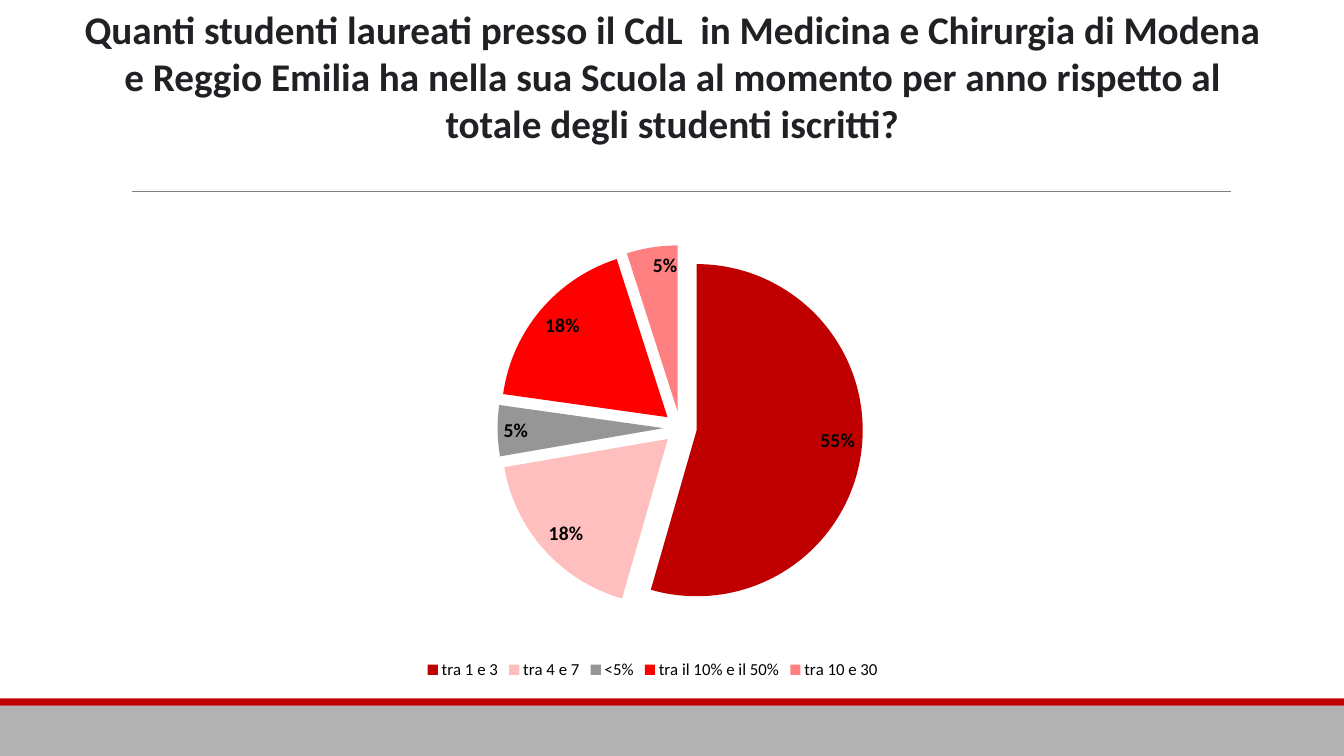
from dataclasses import dataclass

from lxml import etree
from pptx import Presentation
from pptx.chart.data import CategoryChartData
from pptx.dml.color import RGBColor
from pptx.enum.chart import XL_CHART_TYPE as ChartType
from pptx.enum.chart import XL_LABEL_POSITION as LabelPosition
from pptx.enum.chart import XL_LEGEND_POSITION as LegendPosition
from pptx.enum.shapes import MSO_CONNECTOR as Connector
from pptx.enum.shapes import MSO_SHAPE as Preset
from pptx.enum.text import MSO_ANCHOR as Anchor
from pptx.enum.text import MSO_AUTO_SIZE as AutoSize
from pptx.enum.text import PP_ALIGN as Align
from pptx.oxml import parse_xml
from pptx.oxml.ns import nsdecls, qn
from pptx.util import Cm, Pt


@dataclass(frozen=True)
class Theme:
    font: str = "Calibri"
    chart_font: str = "Arial"
    title_ink: str = "202124"
    ink: str = "000000"
    rule: str = "808080"
    band: str = "B2B2B2"
    accent: str = "C00000"
    title_size: int = 28
    label_size: int = 14
    legend_size: int = 12
    chart_size: int = 10


THEME = Theme()
SLIDE_WIDTH, SLIDE_HEIGHT = 33.87, 19.05
QUESTION = (
    "Quanti studenti laureati presso il CdL  in Medicina e Chirurgia di Modena "
    "e Reggio Emilia ha nella sua Scuola al momento per anno rispetto al "
    "totale degli studenti iscritti?"
)
ANSWERS = [
    ("tra 1 e 3", 55, "C00000"),
    ("tra 4 e 7", 18, "FFBFBF"),
    ("<5%", 5, "969696"),
    ("tra il 10% e il 50%", 18, "FF0000"),
    ("tra 10 e 30", 5, "FF8080"),
]
PLOT_LAYOUT = {"x": 0.08, "y": 0.04, "w": 0.9, "h": 0.8}
EXPLOSION = 10


def style_font(font, face, size, color, bold=False):
    font.name = face
    font.size = Pt(size)
    font.bold = bold
    font.color.rgb = RGBColor.from_string(color)


def add_band(slide, left, top, width, height, color):
    band = slide.shapes.add_shape(Preset.RECTANGLE, Cm(left), Cm(top), Cm(width), Cm(height))
    band.shadow.inherit = False
    band.fill.solid()
    band.fill.fore_color.rgb = RGBColor.from_string(color)
    band.line.fill.background()


def add_footer(slide, left, top, width, height):
    stripe = 0.18
    add_band(slide, left, top + stripe, width, height - stripe, THEME.band)
    add_band(slide, left, top, width, stripe, THEME.accent)


def add_rule(slide, left, top, width):
    rule = slide.shapes.add_connector(
        Connector.STRAIGHT, Cm(left), Cm(top), Cm(left + width), Cm(top)
    )
    rule.line.color.rgb = RGBColor.from_string(THEME.rule)
    rule.line.width = Pt(0.5)
    etree.SubElement(rule._element.spPr, qn("a:effectLst"))


def place_question(slide, left, top, width, height):
    question = slide.shapes.title
    question.left, question.top = Cm(left), Cm(top)
    question.width, question.height = Cm(width), Cm(height)
    frame = question.text_frame
    frame.text = QUESTION
    frame.word_wrap = True
    frame.auto_size = AutoSize.SHAPE_TO_FIT_TEXT
    frame.vertical_anchor = Anchor.TOP
    paragraph = frame.paragraphs[0]
    paragraph.alignment = Align.CENTER
    for run in paragraph.runs:
        style_font(run.font, THEME.font, THEME.title_size, THEME.title_ink, bold=True)


def set_plot_layout(chart):
    plot_area = chart._chartSpace.chart.plotArea
    for automatic in plot_area.findall(qn("c:layout")):
        plot_area.remove(automatic)
    sides = "".join(f'<c:{side} val="{share}"/>' for side, share in PLOT_LAYOUT.items())
    plot_area.insert(0, parse_xml(
        f'<c:layout {nsdecls("c")}><c:manualLayout><c:layoutTarget val="inner"/>'
        f'<c:xMode val="edge"/><c:yMode val="edge"/>{sides}</c:manualLayout></c:layout>'
    ))


def style_slices(series):
    for index, (_, _, color) in enumerate(ANSWERS):
        fill = series.points[index].format.fill
        fill.solid()
        fill.fore_color.rgb = RGBColor.from_string(color)
    explosion = parse_xml(f'<c:explosion {nsdecls("c")} val="{EXPLOSION}"/>')
    series._element.find(qn("c:dPt")).addprevious(explosion)


def add_answers_pie(slide, left, top, width, height):
    answers = CategoryChartData()
    answers.categories = [answer for answer, _, _ in ANSWERS]
    answers.add_series("Series 1", [share for _, share, _ in ANSWERS])
    chart = slide.shapes.add_chart(
        ChartType.PIE, Cm(left), Cm(top), Cm(width), Cm(height), answers
    ).chart
    style_font(chart.font, THEME.chart_font, THEME.chart_size, THEME.ink)
    chart.has_title = False
    chart.has_legend = True
    chart.legend.position = LegendPosition.BOTTOM
    chart.legend.include_in_layout = False
    style_font(chart.legend.font, THEME.font, THEME.legend_size, THEME.ink)
    set_plot_layout(chart)

    pie = chart.plots[0]
    pie.vary_by_categories = True
    style_slices(pie.series[0])
    labels = pie.series[0].data_labels
    labels.show_value = True
    labels.number_format = '0"%"'
    labels.number_format_is_linked = False
    labels.position = LabelPosition.INSIDE_END
    style_font(labels.font, THEME.font, THEME.label_size, THEME.ink, bold=True)


def build_survey_slide(deck):
    slide = deck.slides.add_slide(deck.slide_layouts[5])
    add_footer(slide, 0, 17.6, SLIDE_WIDTH, SLIDE_HEIGHT - 17.6)
    add_rule(slide, 3.33, 4.83, 27.68)
    place_question(slide, 1.7, 0, 30.48, 3.84)
    add_answers_pie(slide, 4.88, 5.72, 23.14, 11.51)


def main():
    deck = Presentation()
    deck.slide_width, deck.slide_height = Cm(SLIDE_WIDTH), Cm(SLIDE_HEIGHT)
    build_survey_slide(deck)
    deck.save("out.pptx")


if __name__ == "__main__":
    main()
